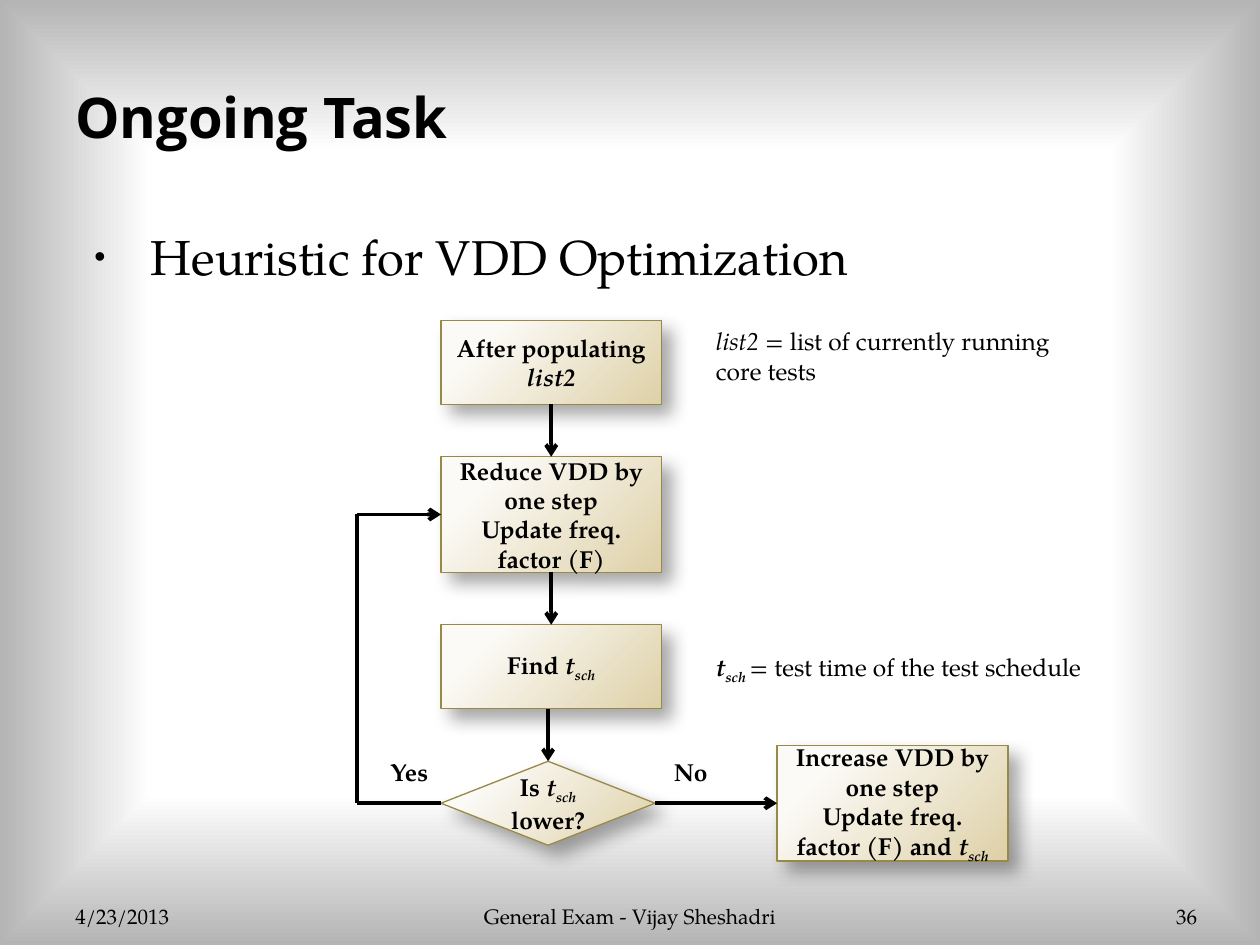
"""Build a slide with a flowchart of a heuristic for VDD optimization."""
import pptx
import pptx.chart.data
import pptx.dml.color
import pptx.enum.shapes
import pptx.enum.text
import pptx.oxml
import pptx.oxml.ns
import pptx.util

Pt = pptx.util.Pt
qn = pptx.oxml.ns.qn
RGBColor = pptx.dml.color.RGBColor
Align = pptx.enum.text.PP_ALIGN
Anchor = pptx.enum.text.MSO_ANCHOR
Preset = pptx.enum.shapes.MSO_SHAPE

BLACK = RGBColor(0x00, 0x00, 0x00)
WHITE = RGBColor(0xFF, 0xFF, 0xFF)
GRAY = RGBColor(0xB4, 0xB4, 0xB4)
IVORY = RGBColor(0xFB, 0xFA, 0xF6)
SAND = RGBColor(0xDE, 0xD1, 0xA8)
BRONZE = RGBColor(0x99, 0x89, 0x46)
SERIF = "TeX Gyre Pagella"
NAMESPACE = pptx.oxml.ns.nsdecls("a")

PLAIN = {"bold": False, "italic": False}
BOLD = {"bold": True, "italic": False}
ITALIC = {"bold": False, "italic": True}
BOLD_ITALIC = {"bold": True, "italic": True}
SUBSCRIPT = {"bold": True, "italic": True, "baseline": "-25000"}


def set_gradient(fill, owner, stops, kind, edges):
    fill.gradient()
    for stop, (position, color) in zip(fill.gradient_stops, stops):
        stop.position = position
        stop.color.rgb = color
    gradient = owner.find(".//" + qn("a:gradFill"))
    gradient.remove(gradient.find(qn("a:lin")))
    left, top, right, bottom = edges
    gradient.append(pptx.oxml.parse_xml(
        f'<a:path {NAMESPACE} path="{kind}"><a:fillToRect l="{left}" t="{top}" '
        f'r="{right}" b="{bottom}"/></a:path>'))


def write_text(shape, paragraphs, frame_format, alignment, size=14, name=SERIF):
    frame = shape.text_frame
    for key, value in {"word_wrap": True, **frame_format}.items():
        setattr(frame, key, value)
    for index, runs in enumerate(paragraphs):
        paragraph = frame.add_paragraph() if index else frame.paragraphs[0]
        paragraph.alignment = alignment
        for text, style in runs:
            run = paragraph.add_run()
            run.text = text
            font_format = {"size": Pt(size), "name": name, **style}
            baseline = font_format.pop("baseline", None)
            for key, value in font_format.items():
                setattr(run.font, key, value)
            run.font.color.rgb = BLACK
            if baseline:
                run._r.get_or_add_rPr().set("baseline", baseline)


presentation = pptx.Presentation()
presentation.slide_width = Pt(720)
presentation.slide_height = Pt(540)
slide = presentation.slides.add_slide(presentation.slide_layouts[6])
set_gradient(slide.background.fill, slide.element, [(0.68, WHITE), (1, GRAY)],
             "shape", [50000] * 4)

middle = {"vertical_anchor": Anchor.MIDDLE}
bottom = {"vertical_anchor": Anchor.BOTTOM}
top = {"vertical_anchor": Anchor.TOP}
flush = {**bottom, "margin_left": 0, "margin_right": 0}

texts = [
    ((36, 21.6, 648, 90), [("Ongoing Task", BOLD)], middle, Align.LEFT, 32, "Open Sans"),
    ((36, 505.5, 168, 28.75), [("4/23/2013", PLAIN)], bottom, Align.LEFT, 12, SERIF),
    ((246, 505.5, 228, 28.75), [("General Exam - Vijay Sheshadri", PLAIN)],
     bottom, Align.CENTER, 12, SERIF),
    ((624, 505.5, 60, 28.75), [("36", PLAIN)], flush, Align.RIGHT, 12, SERIF),
    ((402, 183, 222, 41), [("list2", ITALIC), (" = list of currently running core tests", PLAIN)],
     top, Align.LEFT, 14, SERIF),
    ((402, 369, 236, 24.25),
     [("t", BOLD_ITALIC), ("sch ", SUBSCRIPT), ("= test time of the test schedule", PLAIN)],
     top, Align.LEFT, 14, SERIF),
    ((378, 429, 42, 24.25), [("No", BOLD)], top, Align.LEFT, 14, SERIF),
    ((216, 429, 42, 24.25), [("Yes", BOLD)], top, Align.LEFT, 14, SERIF),
    ((36, 126, 648, 371), [("Heuristic for VDD Optimization", PLAIN)],
     top, Align.LEFT, 28, SERIF),
]
for box, runs, frame_format, alignment, size, name in texts:
    text_box = slide.shapes.add_textbox(*map(Pt, box))
    write_text(text_box, [runs], frame_format, alignment, size, name)

heading = text_box.text_frame.paragraphs[0]
heading.space_before = Pt(5.6)
properties = heading._p.get_or_add_pPr()
properties.set("marL", str(Pt(43.2)))
properties.set("indent", str(Pt(-32.4)))
for bullet in ('buClr {}><a:srgbClr val="000000"/></a:buClr>', 'buSzPct {} val="65000"/>',
               'buFont {} typeface="Arial"/>', 'buChar {} char="•"/>'):
    properties.append(pptx.oxml.parse_xml("<a:" + bullet.format(NAMESPACE)))

steps = {
    "populate": (Preset.FLOWCHART_PROCESS, (252, 183, 126, 48),
                 [[("After populating", BOLD)], [("list2", BOLD_ITALIC)]]),
    "reduce": (Preset.FLOWCHART_PROCESS, (252, 261, 126, 66),
               [[("Reduce VDD by one step", BOLD)], [("Update freq. factor (F)", BOLD)]]),
    "find": (Preset.FLOWCHART_PROCESS, (252, 357, 126, 48),
             [[("Find ", BOLD), ("t", BOLD_ITALIC), ("sch", SUBSCRIPT)]]),
    "decide": (Preset.FLOWCHART_DECISION, (252, 435, 122.4, 48),
               [[("Is ", BOLD), ("t", BOLD_ITALIC), ("sch ", SUBSCRIPT), ("lower?", BOLD)]]),
    "increase": (Preset.FLOWCHART_PROCESS, (444, 426, 132, 66),
                 [[("Increase VDD by one step", BOLD)],
                  [("Update freq. factor (F) and ", BOLD), ("t", BOLD_ITALIC),
                   ("sch", SUBSCRIPT)]]),
}
nodes = {}
for step, (preset, box, paragraphs) in steps.items():
    shape = slide.shapes.add_shape(preset, *map(Pt, box))
    set_gradient(shape.fill, shape._element.spPr, [(0.2, IVORY), (1, SAND)],
                 "circle", (-15000, -15000, 115000, 115000))
    shape.line.color.rgb = BRONZE
    shape.line.width = Pt(0.75)
    shape.shadow.inherit = False
    shape._element.spPr.find(qn("a:effectLst")).append(pptx.oxml.parse_xml(
        f'<a:outerShdw {NAMESPACE} blurRad="{Pt(10.2)}" dist="{Pt(8)}" dir="2700000" '
        'algn="tl" rotWithShape="0"><a:srgbClr val="000000"><a:alpha val="35000"/>'
        '</a:srgbClr></a:outerShdw>'))
    write_text(shape, paragraphs, middle, Align.CENTER)
    nodes[step] = shape

links = [
    ((315, 231), (315, 261), ("populate", 2), ("reduce", 0), True),
    ((315, 327), (315, 357), ("reduce", 2), ("find", 0), True),
    ((313.2, 405), (313.2, 435), None, ("decide", 0), True),
    ((374.4, 459), (444, 459), ("decide", 3), ("increase", 1), True),
    ((252, 459), (204, 459), ("decide", 1), None, False),
    ((204, 459), (204, 294), None, None, False),
    ((204, 294), (252, 294), None, ("reduce", 1), True),
]
for start, end, source, target, has_arrow in links:
    connector = slide.shapes.add_connector(
        pptx.enum.shapes.MSO_CONNECTOR.STRAIGHT, *map(Pt, start + end))
    if source:
        connector.begin_connect(nodes[source[0]], source[1])
    if target:
        connector.end_connect(nodes[target[0]], target[1])
    connector.line.color.rgb = BLACK
    connector.line.width = Pt(2.25)
    if has_arrow:
        connector.line._get_or_add_ln().append(
            pptx.oxml.parse_xml(f'<a:tailEnd {NAMESPACE} type="arrow"/>'))
    connector._element.spPr.append(pptx.oxml.parse_xml(f"<a:effectLst {NAMESPACE}/>"))

presentation.save("out.pptx")
